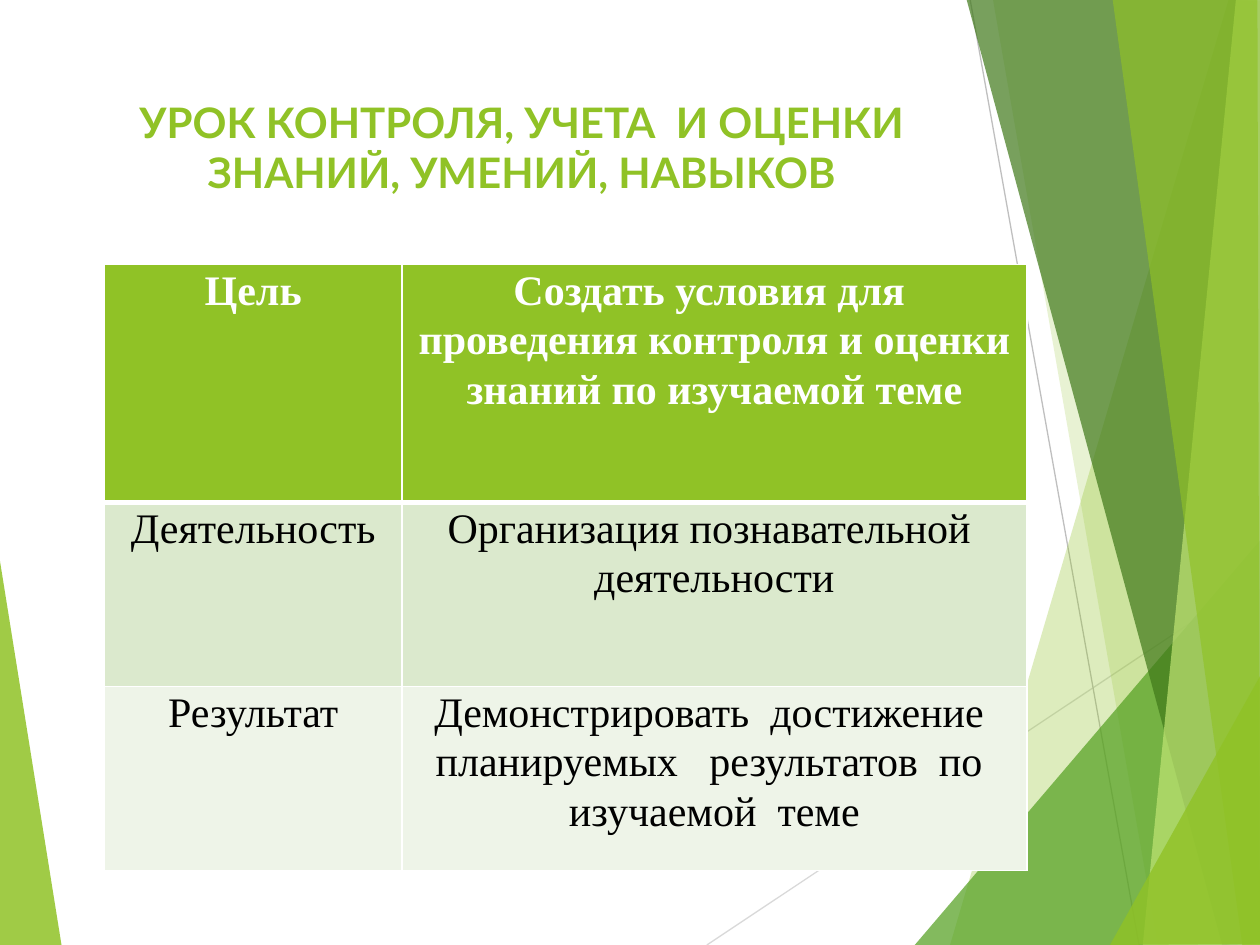
from lxml.etree import SubElement
from pptx import Presentation
from pptx.dml.color import RGBColor
from pptx.enum.shapes import MSO_CONNECTOR
from pptx.enum.text import MSO_ANCHOR, PP_ALIGN
from pptx.oxml import parse_xml
from pptx.oxml.ns import nsdecls, qn
from pptx.util import Pt

PX = 9144
SLIDE = (0, 0, 1000, 750)
TITLE_BOX = (67, 70, 694, 93)
TABLE_BOX = (83, 210, 732, 481)

WHITE = RGBColor(0xFF, 0xFF, 0xFF)
BLACK = RGBColor(0x00, 0x00, 0x00)
GREEN = RGBColor(0x90, 0xC2, 0x26)
LEAF = RGBColor(0x54, 0xA0, 0x21)
FOREST = RGBColor(0x3F, 0x78, 0x19)
LIME = RGBColor(0xC0, 0xE4, 0x74)
BAND_DARK = RGBColor(0xDB, 0xE9, 0xCD)
BAND_LIGHT = RGBColor(0xEE, 0xF4, 0xE8)
LIGHT_GRAY = RGBColor(0xD9, 0xD9, 0xD9)
GRAY = RGBColor(0xBF, 0xBF, 0xBF)

LEFT_WEDGE = (GREEN, 85, [(-1, 439), (49, 751), (-1, 750)])
RAYS = [
    (LIGHT_GRAY, (561, 750), (1001, 457)),
    (GRAY, (770, 0), (904, 750)),
]
RIGHT_FACETS = [
    (GREEN, 30, [(975, 0), (754, 750), (1002, 751), (1001, 1)]),
    (GREEN, 20, [(788, -1), (919, 750), (1001, 750), (1001, -1)]),
    (LEAF, 72, [(726, 750), (1000, 429), (1001, 750)]),
    (FOREST, 70, [(767, -1), (970, 750), (1001, 749), (1001, -1)]),
    (LIME, 70, [(981, -1), (907, 750), (1001, 750), (1000, -1)]),
    (GREEN, 65, [(883, -1), (986, 750), (1000, 750), (998, -1)]),
    (GREEN, 80, [(881, 750), (1001, 535), (1001, 749)]),
]

TITLE = "УРОК КОНТРОЛЯ, УЧЕТА  И ОЦЕНКИ ЗНАНИЙ, УМЕНИЙ, НАВЫКОВ"
TITLE_FONT = {"name": "Lato", "size": Pt(24), "bold": True}
HEADER_FONT = {"name": "Times New Roman", "size": Pt(24), "bold": True}
BODY_FONT = {**HEADER_FONT, "bold": False}
CELL_FORMAT = {"margin_left": 7 * PX, "margin_right": 7 * PX,
               "margin_top": 0, "margin_bottom": 0}
COLUMNS = [236, 496]
ROWS = [
    (189, GREEN, WHITE, HEADER_FONT,
     ("Цель", "Создать условия для  проведения контроля и оценки знаний по изучаемой теме")),
    (146, BAND_DARK, BLACK, BODY_FONT,
     ("Деятельность", "Организация познавательной  деятельности")),
    (146, BAND_LIGHT, BLACK, BODY_FONT,
     ("Результат", "Демонстрировать  достижение  планируемых   результатов  по  изучаемой  теме")),
]


def apply_format(target, values):
    for key, value in values.items():
        setattr(target, key, value)


def write(paragraph, text, font, color, spacing):
    apply_format(paragraph, {"alignment": PP_ALIGN.CENTER, "line_spacing": spacing})
    run = paragraph.add_run()
    run.text = text
    apply_format(run.font, font)
    run.font.color.rgb = color


def add_facet(slide, box, color, opacity, points):
    left, top = box[:2]
    builder = slide.shapes.build_freeform(*points[0], scale=PX)
    builder.add_line_segments(points[1:], close=True)
    facet = builder.convert_to_shape(left * PX, top * PX)
    facet.shadow.inherit = False
    facet.fill.solid()
    facet.fill.fore_color.rgb = color
    facet.line.fill.background()
    fill_color = facet.fill._xPr.find(qn("a:solidFill"))[0]
    SubElement(fill_color, qn("a:alpha"), val=str(opacity * 1000))


def add_ray(slide, box, color, start, end):
    left, top = box[:2]
    ends = [(origin + offset) * PX for point in (start, end)
            for origin, offset in zip((left, top), point)]
    ray = slide.shapes.add_connector(MSO_CONNECTOR.STRAIGHT, *ends)
    ray.line.color.rgb = color
    ray.line.width = Pt(0.75)
    SubElement(ray._element.spPr, qn("a:effectLst"))


def add_backdrop(slide, box):
    add_facet(slide, box, *LEFT_WEDGE)
    for ray in RAYS:
        add_ray(slide, box, *ray)
    for facet in RIGHT_FACETS:
        add_facet(slide, box, *facet)


def add_title(slide, box):
    frame = slide.shapes.add_textbox(*(n * PX for n in box)).text_frame
    apply_format(frame, {"word_wrap": True, "vertical_anchor": MSO_ANCHOR.MIDDLE})
    write(frame.paragraphs[0], TITLE, TITLE_FONT, GREEN, 1.0)


def set_borders(cell, widths):
    properties = cell._tc.get_or_add_tcPr()
    for position, (side, width) in enumerate(widths.items()):
        properties.insert(position, parse_xml(
            f'<a:ln{side} {nsdecls("a")} w="{Pt(width)}"><a:solidFill>'
            f'<a:srgbClr val="{WHITE}"/></a:solidFill></a:ln{side}>'))


def add_lesson_table(slide, box):
    table = slide.shapes.add_table(len(ROWS), len(COLUMNS), *(n * PX for n in box)).table
    for column, width in zip(table.columns, COLUMNS):
        column.width = width * PX
    for r, (height, fill, color, font, texts) in enumerate(ROWS):
        table.rows[r].height = height * PX
        borders = {"L": 1, "R": 1, "T": 3 if r == 1 else 1, "B": 3 if r == 0 else 1}
        for c, text in enumerate(texts):
            cell = table.cell(r, c)
            apply_format(cell, CELL_FORMAT)
            cell.fill.solid()
            cell.fill.fore_color.rgb = fill
            set_borders(cell, borders)
            write(cell.text_frame.paragraphs[0], text, font, color, 1.07)


def main():
    deck = Presentation()
    apply_format(deck, {"slide_width": SLIDE[2] * PX, "slide_height": SLIDE[3] * PX})
    slide = deck.slides.add_slide(deck.slide_layouts[6])
    add_backdrop(slide, SLIDE)
    add_title(slide, TITLE_BOX)
    add_lesson_table(slide, TABLE_BOX)
    deck.save("out.pptx")


if __name__ == "__main__":
    main()
